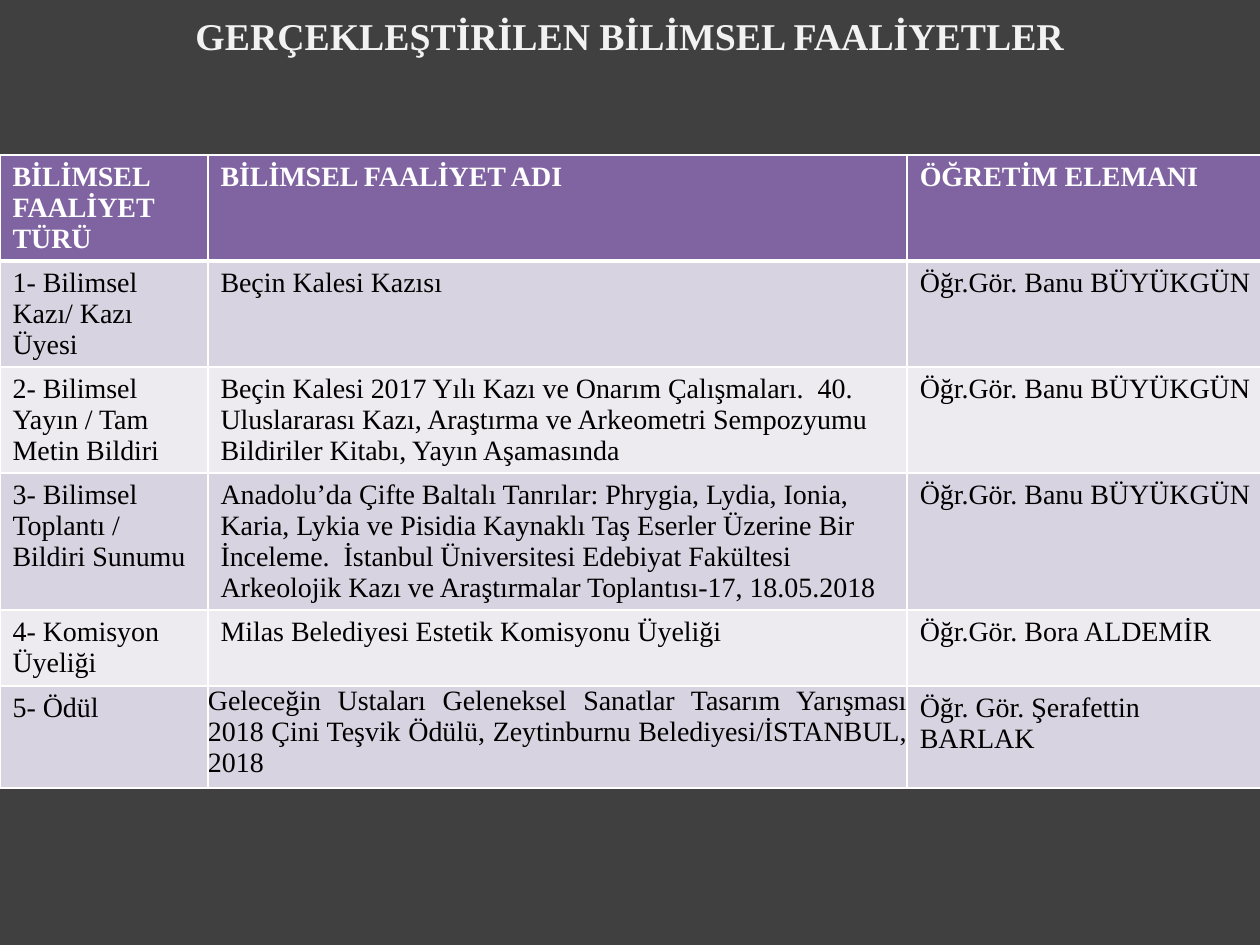
from lxml.etree import SubElement
from pptx import Presentation
from pptx.dml.color import RGBColor
from pptx.enum.text import MSO_ANCHOR, PP_ALIGN
from pptx.oxml.ns import qn
from pptx.util import Inches, Pt

FONT = "Times New Roman"
HEADER_FILL = "8064A2"
BAND_FILLS = ["EDEAF0", "D8D3E0"]
COLUMN_WIDTHS = [1.65, 5.55, 2.84]
ROW_HEIGHTS = [0.84, 0.84, 0.84, 1.09, 0.6, 0.81]
ROWS = [
    ["BİLİMSEL FAALİYET TÜRÜ", "BİLİMSEL FAALİYET ADI", "ÖĞRETİM ELEMANI"],
    ["1- Bilimsel Kazı/ Kazı Üyesi", "Beçin Kalesi Kazısı", "Öğr.Gör. Banu BÜYÜKGÜN"],
    ["2- Bilimsel Yayın / Tam Metin Bildiri",
     "Beçin Kalesi 2017 Yılı Kazı ve Onarım Çalışmaları.  40. Uluslararası Kazı, "
     "Araştırma ve Arkeometri Sempozyumu Bildiriler Kitabı, Yayın Aşamasında",
     "Öğr.Gör. Banu BÜYÜKGÜN"],
    ["3- Bilimsel Toplantı /\nBildiri Sunumu",
     "Anadolu’da Çifte Baltalı Tanrılar: Phrygia, Lydia, Ionia, Karia, Lykia ve Pisidia "
     "Kaynaklı Taş Eserler Üzerine Bir İnceleme.  İstanbul Üniversitesi Edebiyat Fakültesi "
     "Arkeolojik Kazı ve Araştırmalar Toplantısı-17, 18.05.2018",
     "Öğr.Gör. Banu BÜYÜKGÜN"],
    ["4- Komisyon Üyeliği", "Milas Belediyesi Estetik Komisyonu Üyeliği",
     "Öğr.Gör. Bora ALDEMİR"],
    ["5- Ödül",
     "Geleceğin Ustaları Geleneksel Sanatlar Tasarım Yarışması 2018 Çini Teşvik Ödülü, "
     "Zeytinburnu Belediyesi/İSTANBUL, 2018",
     "Öğr. Gör. Şerafettin BARLAK"],
]


def color(value):
    """Turn a hex string into a colour."""
    return RGBColor.from_string(value)


def add_span(para, text, size, ink, bold):
    """Add one formatted run to a paragraph."""
    span = para.add_run()
    span.text = text
    span.font.name = FONT
    span.font.size = Pt(size)
    span.font.bold = bold
    span.font.color.rgb = color(ink)


def set_background(page, value):
    """Fill the page background with one colour."""
    fill = page.background.fill
    fill.solid()
    fill.fore_color.rgb = color(value)


def set_title(page, text):
    """Place and format the title along the top of the page."""
    box = page.shapes.title
    box.left, box.top = Inches(0), Inches(0.03)
    box.width, box.height = Inches(10), Inches(0.81)
    frame = box.text_frame
    frame.word_wrap = True
    frame.vertical_anchor = MSO_ANCHOR.TOP
    frame.margin_top = Inches(0.07)
    para = frame.paragraphs[0]
    para.alignment = PP_ALIGN.CENTER
    add_span(para, text, 21.6, "F2F2F2", True)


def set_borders(cell, widths):
    """Draw white cell borders, given a width in points for each side."""
    properties = cell._tc.get_or_add_tcPr()
    for position, (side, width) in enumerate(widths.items()):
        line = properties.makeelement(qn(f"a:{side}"), {"w": str(Pt(width))})
        fill = SubElement(line, qn("a:solidFill"))
        SubElement(fill, qn("a:srgbClr"), val="FFFFFF")
        properties.insert(position, line)


def fill_cell(cell, text, row):
    """Write and style one cell according to its row."""
    header = row == 0
    cell.fill.solid()
    cell.fill.fore_color.rgb = color(HEADER_FILL if header else BAND_FILLS[row % 2])
    set_borders(cell, {"lnL": 1, "lnR": 1, "lnT": 3 if row == 1 else 1,
                       "lnB": 3 if header else 1})
    frame = cell.text_frame
    for index, line in enumerate(text.split("\n")):
        para = frame.add_paragraph() if index else frame.paragraphs[0]
        add_span(para, line, 16, "FFFFFF" if header else "000000", header)


def justify_without_margins(cell):
    """Justify a cell's text right up to its edges."""
    cell.margin_left = cell.margin_right = cell.margin_top = cell.margin_bottom = 0
    for para in cell.text_frame.paragraphs:
        para.alignment = PP_ALIGN.JUSTIFY


def add_activity_table(page):
    """Add the table of scientific activities."""
    table = page.shapes.add_table(
        len(ROWS), len(COLUMN_WIDTHS), Inches(0), Inches(1.23),
        Inches(sum(COLUMN_WIDTHS)), Inches(sum(ROW_HEIGHTS))).table
    for column, width in zip(table.columns, COLUMN_WIDTHS):
        column.width = Inches(width)
    for row, (texts, height) in enumerate(zip(ROWS, ROW_HEIGHTS)):
        table.rows[row].height = Inches(height)
        for column, text in enumerate(texts):
            fill_cell(table.cell(row, column), text, row)
    justify_without_margins(table.cell(len(ROWS) - 1, 1))


def main():
    """Build and save the deck."""
    deck = Presentation()
    deck.slide_width, deck.slide_height = Inches(10), Inches(7.5)
    page = deck.slides.add_slide(deck.slide_layouts[5])
    set_background(page, "404040")
    set_title(page, "GERÇEKLEŞTİRİLEN BİLİMSEL FAALİYETLER")
    add_activity_table(page)
    deck.save("out.pptx")


if __name__ == "__main__":
    main()
